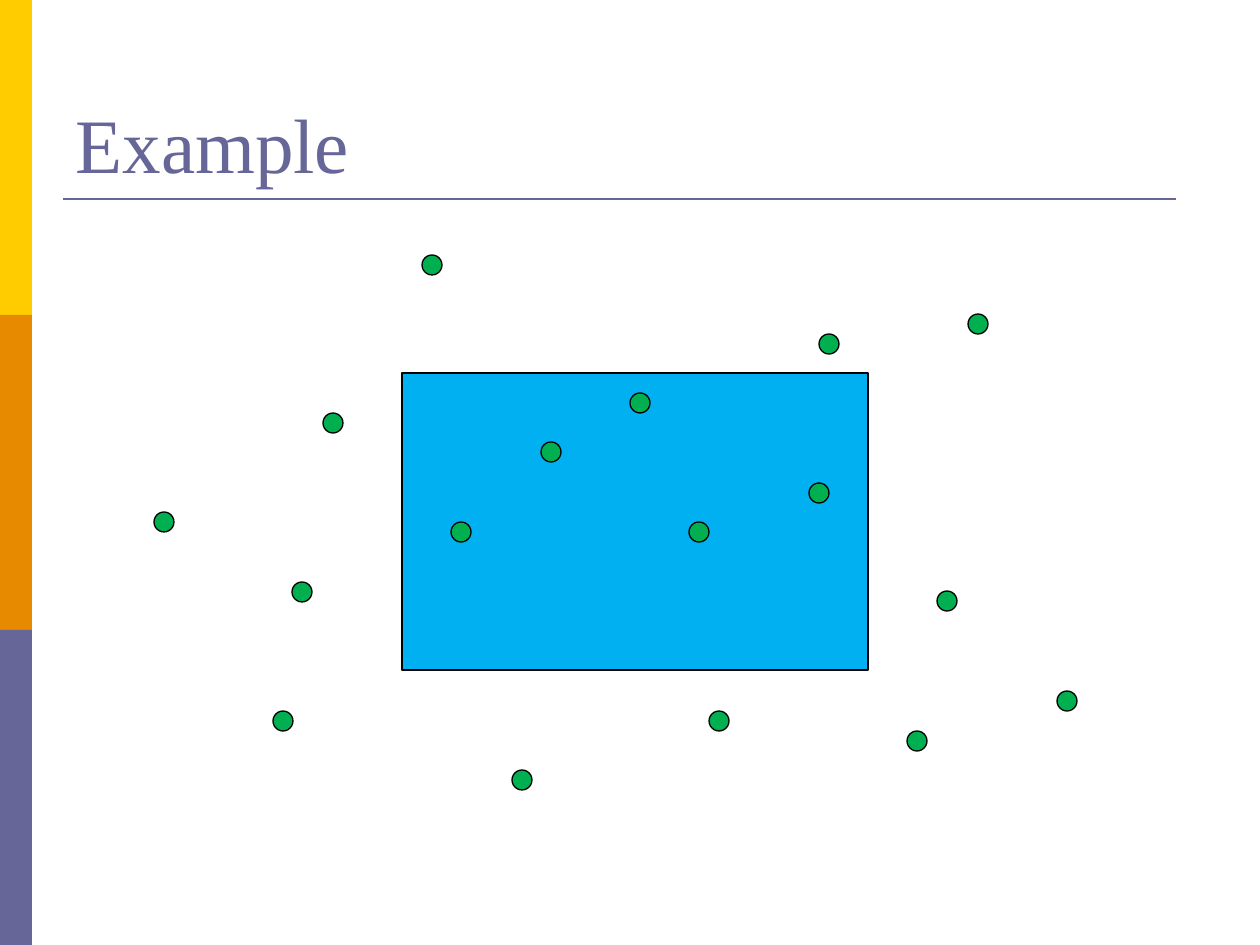
from pptx import Presentation
from pptx.dml.color import RGBColor
from pptx.enum.shapes import MSO_CONNECTOR, MSO_SHAPE
from pptx.enum.text import MSO_ANCHOR, PP_ALIGN
from pptx.oxml.ns import qn
from pptx.util import Pt
from lxml.etree import SubElement

SCALE = 914400 / 126
WIDTH, HEIGHT = 1260, 945

YELLOW = RGBColor(0xFF, 0xCC, 0x00)
ORANGE = RGBColor(0xE7, 0x8A, 0x00)
PURPLE = RGBColor(0x66, 0x66, 0x99)
BLUE = RGBColor(0x00, 0xB0, 0xF0)
GREEN = RGBColor(0x00, 0xB0, 0x50)
BLACK = RGBColor(0x00, 0x00, 0x00)

TITLE = "Example"
TITLE_BOX = (63, 38, 1134, 157)
RULE = (63, 199, 1176, 199)
BAND_COLORS = [YELLOW, ORANGE, PURPLE]
BAND_WIDTH = 32
QUERY_BOX = (402, 373, 466, 297)
POINT_SIZE = 20
POINT_CENTERS = [
    (640, 403), (551, 452), (333, 423), (699, 532), (461, 532), (819, 493),
    (283, 721), (522, 780), (719, 721), (947, 601), (1067, 701), (829, 344),
    (164, 522), (302, 592), (917, 741), (432, 265), (978, 324),
]


def px(*values):
    return [round(value * SCALE) for value in values]


def add_filled(page, kind, bounds, color, outline=None):
    shape = page.shapes.add_shape(kind, *px(*bounds))
    shape.shadow.inherit = False
    shape.fill.solid()
    shape.fill.fore_color.rgb = color
    if outline is None:
        shape.line.fill.background()
    else:
        shape.line.color.rgb = outline
        shape.line.width = Pt(0.75)


def add_title(page):
    title = page.shapes.title
    title.left, title.top, title.width, title.height = px(*TITLE_BOX)
    frame = title.text_frame
    frame.vertical_anchor = MSO_ANCHOR.BOTTOM
    para = frame.paragraphs[0]
    para.alignment = PP_ALIGN.LEFT
    span = para.add_run()
    span.text = TITLE
    span.font.name = "Times New Roman"
    span.font.size = Pt(44)
    span.font.color.rgb = PURPLE


def add_rule(page):
    rule = page.shapes.add_connector(MSO_CONNECTOR.STRAIGHT, *px(*RULE))
    rule.line.color.rgb = PURPLE
    rule.line.width = Pt(1.5)
    SubElement(rule._element.spPr, qn("a:effectLst"))


def main():
    deck = Presentation()
    deck.slide_width, deck.slide_height = px(WIDTH, HEIGHT)
    page = deck.slides.add_slide(deck.slide_layouts[5])

    band_height = HEIGHT // len(BAND_COLORS)
    for index, color in enumerate(BAND_COLORS):
        bounds = (0, index * band_height, BAND_WIDTH, band_height)
        add_filled(page, MSO_SHAPE.RECTANGLE, bounds, color)

    add_rule(page)
    add_title(page)
    add_filled(page, MSO_SHAPE.RECTANGLE, QUERY_BOX, BLUE, BLACK)

    radius = POINT_SIZE // 2
    for x, y in POINT_CENTERS:
        bounds = (x - radius, y - radius, POINT_SIZE, POINT_SIZE)
        add_filled(page, MSO_SHAPE.OVAL, bounds, GREEN, BLACK)

    deck.save("out.pptx")


if __name__ == "__main__":
    main()
